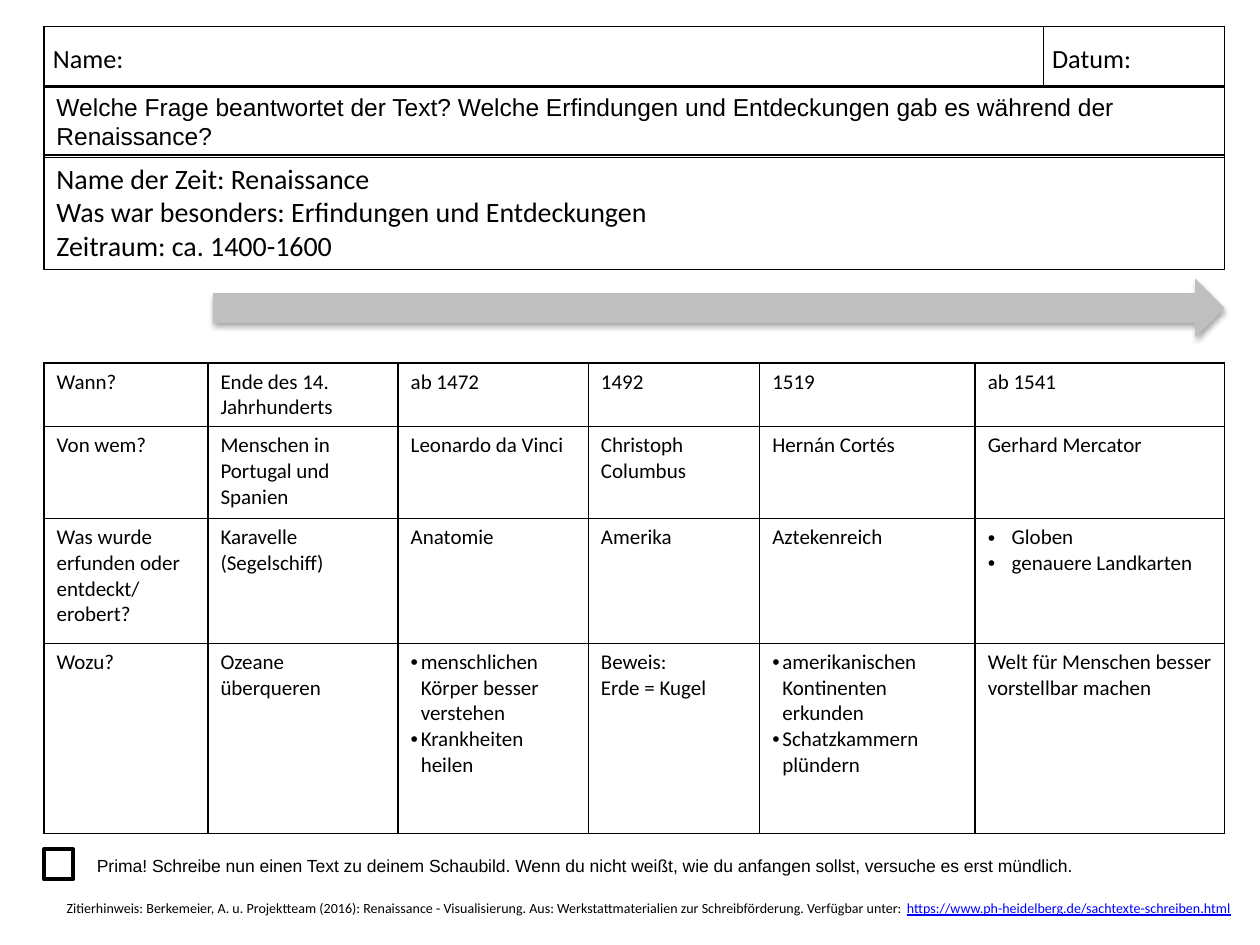
from lxml import etree
from pptx import Presentation
from pptx.dml.color import RGBColor
from pptx.enum.shapes import MSO_SHAPE
from pptx.enum.text import MSO_ANCHOR, PP_ALIGN
from pptx.oxml.ns import qn
from pptx.util import Emu, Pt

PX = 9144
BLACK = RGBColor(0, 0, 0)
GREY = RGBColor(0xBF, 0xBF, 0xBF)
BLUE = RGBColor(0, 0, 0xFF)
RECT, ARROW = MSO_SHAPE.RECTANGLE, MSO_SHAPE.RIGHT_ARROW
TOP, MIDDLE = MSO_ANCHOR.TOP, MSO_ANCHOR.MIDDLE
LEFT = PP_ALIGN.LEFT

EVENT_COLS = [130, 151, 151, 136, 171, 198]
EVENT_ROWS = [50, 73, 99, 151]
EVENTS = [
    ["Wann?", "Ende des 14. Jahrhunderts", "ab 1472", "1492", "1519", "ab 1541"],
    ["Von wem?", "Menschen in Portugal und Spanien", "Leonardo da Vinci",
     "Christoph Columbus", "Hernán Cortés", "Gerhard Mercator"],
    ["Was wurde erfunden oder entdeckt/ erobert?", "Karavelle (Segelschiff)",
     "Anatomie", "Amerika", "Aztekenreich", "Globen\ngenauere Landkarten"],
    ["Wozu?", "Ozeane überqueren",
     "menschlichen Körper besser verstehen\nKrankheiten heilen",
     "Beweis:\nErde = Kugel",
     "amerikanischen Kontinenten erkunden\nSchatzkammern plündern",
     "Welt für Menschen besser vorstellbar machen"],
]
BULLET_INDENTS = {(2, 5): 19, (3, 2): 8, (3, 4): 8}


def px(n):
    return Emu(n * PX)


def add_run(p, text, size, font="Calibri", color=BLACK, underline=None):
    r = p.add_run()
    r.text = text
    r.font.size = Pt(size)
    r.font.name = font
    r.font.color.rgb = color
    r.font.underline = underline


def write(tf, text, size, font="Calibri", indent=0, spacing=None):
    for i, line in enumerate(text.split("\n")):
        p = tf.add_paragraph() if i else tf.paragraphs[0]
        p.alignment = LEFT
        if spacing:
            p.line_spacing = spacing
        if indent:
            pPr = p._p.get_or_add_pPr()
            pPr.set("marL", str(px(indent)))
            pPr.set("indent", str(-px(indent)))
            etree.SubElement(pPr, qn("a:buFont"), typeface="Arial")
            etree.SubElement(pPr, qn("a:buChar"), char="•")
        add_run(p, line, size, font)


def add_box(slide, box, shape=RECT, fill=None, line=None):
    sp = slide.shapes.add_shape(shape, *map(px, box))
    sp.shadow.inherit = False
    if fill is None:
        sp.fill.background()
    else:
        sp.fill.solid()
        sp.fill.fore_color.rgb = fill
    if line is None:
        sp.line.fill.background()
    else:
        sp.line.color.rgb = BLACK
        sp.line.width = Pt(line)
    return sp


def add_text_frame(slide, box):
    tf = slide.shapes.add_textbox(*map(px, box)).text_frame
    tf.word_wrap = True
    return tf


def format_cell(cell):
    tcPr = cell._tc.get_or_add_tcPr()
    for side in "LRTB":
        ln = etree.SubElement(tcPr, qn(f"a:ln{side}"), w=str(Pt(1)))
        fill = etree.SubElement(ln, qn("a:solidFill"))
        etree.SubElement(fill, qn("a:srgbClr"), val=str(BLACK))
    cell.fill.background()


def add_grid(slide, left, top, cols, rows):
    frame = slide.shapes.add_table(
        len(rows), len(cols), px(left), px(top), px(sum(cols)), px(sum(rows)))
    table = frame.table
    table.first_row = table.horz_banding = False
    for col, width in zip(table.columns, cols):
        col.width = px(width)
    for row, height in zip(table.rows, rows):
        row.height = px(height)
    for cell in table.iter_cells():
        format_cell(cell)
    return table


def add_header(slide, left, top):
    table = add_grid(slide, left, top, [793, 53, 91], [48])
    table.cell(0, 1).merge(table.cell(0, 2))
    for col, label in enumerate(["Name:", "Datum:"]):
        cell = table.cell(0, col)
        cell.vertical_anchor = MIDDLE
        cell.margin_left = cell.margin_right = px(7)
        cell.margin_top = cell.margin_bottom = 0
        write(cell.text_frame, label, 15, spacing=1.15)


def add_panel(slide, box, text, size, font):
    tf = add_box(slide, box, line=0.75).text_frame
    tf.word_wrap = True
    tf.vertical_anchor = TOP
    write(tf, text, size, font)


def add_time_arrow(slide, box):
    sp = add_box(slide, box, ARROW, fill=GREY)
    effects = sp._element.spPr.find(qn("a:effectLst"))
    shadow = etree.SubElement(
        effects, qn("a:outerShdw"), blurRad=str(Pt(3.1)), dist=str(Pt(1.8)),
        dir="5400000", rotWithShape="0")
    color = etree.SubElement(shadow, qn("a:srgbClr"), val=str(BLACK))
    etree.SubElement(color, qn("a:alpha"), val="35000")


def add_events(slide, left, top):
    table = add_grid(slide, left, top, EVENT_COLS, EVENT_ROWS)
    for r, row in enumerate(EVENTS):
        for c, text in enumerate(row):
            write(table.cell(r, c).text_frame, text, 12,
                  indent=BULLET_INDENTS.get((r, c), 0))


def add_task(slide, left, top):
    add_box(slide, (left, top, 23, 24), line=2.25)
    tf = add_text_frame(slide, (left + 32, top, 902, 27))
    write(tf, "Prima! Schreibe nun einen Text zu deinem Schaubild. Wenn du nicht "
              "weißt, wie du anfangen sollst, versuche es erst mündlich.", 10, "Arial")


def add_citation(slide, box):
    tf = add_text_frame(slide, box)
    write(tf, "Zitierhinweis: Berkemeier, A. u. Projektteam (2016): Renaissance - "
              "Visualisierung. Aus: Werkstattmaterialien zur Schreibförderung. "
              "Verfügbar unter: ", 8)
    add_run(tf.paragraphs[0], "https://www.ph-heidelberg.de/sachtexte-schreiben.html",
            8, color=BLUE, underline=True)


def main():
    prs = Presentation()
    prs.slide_width, prs.slide_height = px(1000), px(750)
    slide = prs.slides.add_slide(prs.slide_layouts[6])
    add_events(slide, 35, 288)
    add_time_arrow(slide, (169, 221, 803, 47))
    add_panel(slide, (35, 68, 937, 57),
              "Welche Frage beantwortet der Text? Welche Erfindungen und "
              "Entdeckungen gab es während der Renaissance?", 14, "Arial")
    add_header(slide, 35, 21)
    add_panel(slide, (35, 123, 937, 91),
              "Name der Zeit: Renaissance\n"
              "Was war besonders: Erfindungen und Entdeckungen\n"
              "Zeitraum: ca. 1400-1600", 16, "Calibri")
    add_task(slide, 35, 674)
    add_citation(slide, (43, 709, 957, 24))
    prs.save("out.pptx")


if __name__ == "__main__":
    main()
